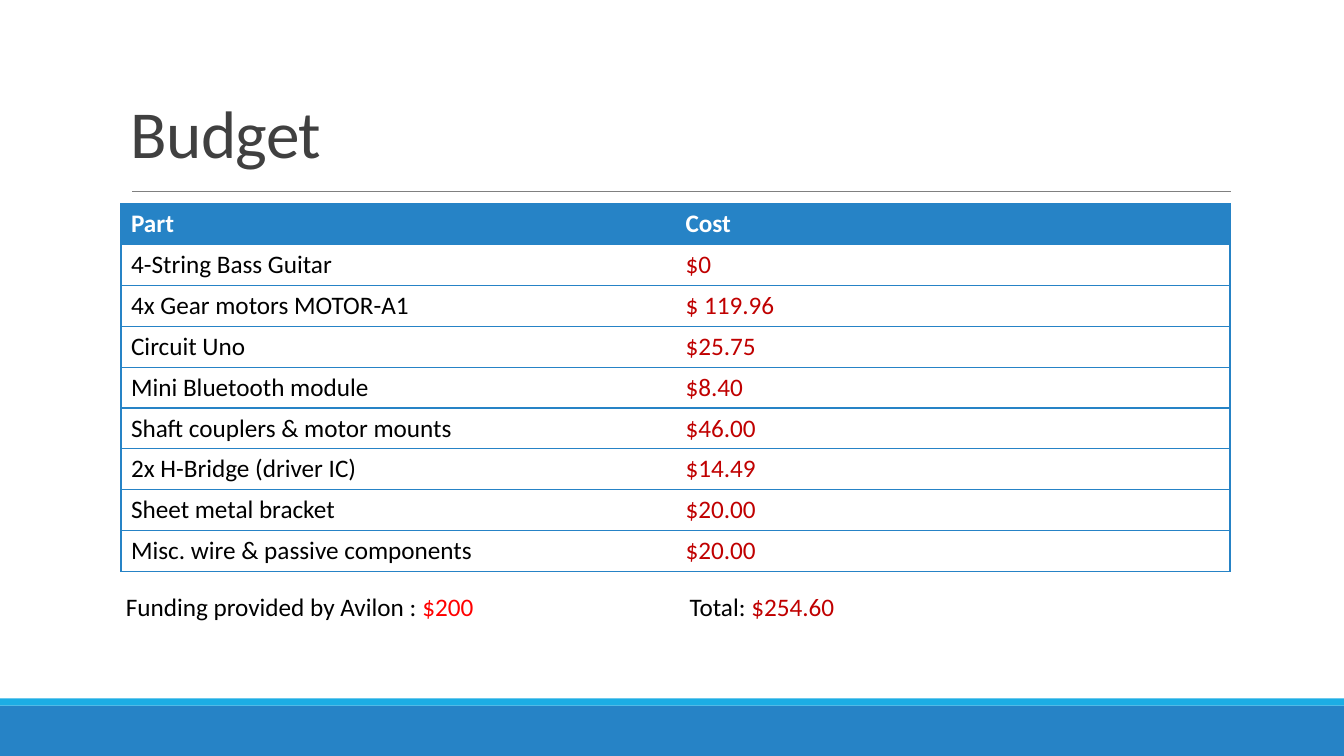
from lxml import etree
from pptx import Presentation
from pptx.dml.color import RGBColor
from pptx.enum.shapes import MSO_CONNECTOR, MSO_SHAPE
from pptx.enum.text import MSO_ANCHOR
from pptx.oxml.ns import qn
from pptx.util import Inches, Pt

RECTANGLE = MSO_SHAPE.RECTANGLE
STRAIGHT = MSO_CONNECTOR.STRAIGHT
TOP, BOTTOM = MSO_ANCHOR.TOP, MSO_ANCHOR.BOTTOM

BLUE = RGBColor(0x26, 0x83, 0xC6)
CYAN = RGBColor(0x1C, 0xAD, 0xE4)
GRAY = RGBColor(0x80, 0x80, 0x80)
DARK_GRAY = RGBColor(0x40, 0x40, 0x40)
WHITE = RGBColor(0xFF, 0xFF, 0xFF)
BLACK = RGBColor(0x00, 0x00, 0x00)
DARK_RED = RGBColor(0xC0, 0x00, 0x00)
RED = RGBColor(0xFF, 0x00, 0x00)

FONT = "Calibri"
SLIDE_WIDTH, SLIDE_HEIGHT = 13.33, 7.5
ROW_HEIGHT = 3.65 / 9

BUDGET = [
    ("Part", "Cost"),
    ("4-String Bass Guitar", "$0"),
    ("4x Gear motors MOTOR-A1", "$ 119.96"),
    ("Circuit Uno", "$25.75"),
    ("Mini Bluetooth module", "$8.40"),
    ("Shaft couplers & motor mounts", "$46.00"),
    ("2x H-Bridge (driver IC)", "$14.49"),
    ("Sheet metal bracket", "$20.00"),
    ("Misc. wire & passive components", "$20.00"),
]


def add_run(paragraph, text, color, size=18, bold=False):
    run = paragraph.add_run()
    run.text = text
    run.font.name = FONT
    run.font.size = Pt(size)
    run.font.bold = bold
    run.font.color.rgb = color
    return run


def add_band(slide, top, height, color):
    band = slide.shapes.add_shape(
        RECTANGLE, 0, Inches(top), Inches(SLIDE_WIDTH), Inches(height))
    band.shadow.inherit = False
    band.fill.solid()
    band.fill.fore_color.rgb = color
    band.line.fill.background()


def add_rule(slide, left, right, top):
    rule = slide.shapes.add_connector(
        STRAIGHT, Inches(left), Inches(top), Inches(right), Inches(top))
    rule.line.color.rgb = GRAY
    rule.line.width = Pt(0.5)
    etree.SubElement(rule._element.spPr, qn("a:effectLst"))


def add_text(slide, left, top, width, height, anchor=TOP):
    """Add a text box and return its first paragraph."""
    box = slide.shapes.add_textbox(
        Inches(left), Inches(top), Inches(width), Inches(height))
    box.text_frame.word_wrap = True
    box.text_frame.vertical_anchor = anchor
    return box.text_frame.paragraphs[0]


def set_borders(cell, visible_sides):
    """Draw the named sides (L, R, T, B) in blue and clear the others."""
    properties = cell._tc.get_or_add_tcPr()
    for index, side in enumerate("LRTB"):
        border = etree.Element(qn(f"a:ln{side}"), w=str(Pt(1)))
        if side in visible_sides:
            fill = etree.SubElement(border, qn("a:solidFill"))
            etree.SubElement(fill, qn("a:srgbClr"), val=str(BLUE))
        else:
            etree.SubElement(border, qn("a:noFill"))
        properties.insert(index, border)


def add_budget_table(slide, left, top, width):
    frame = slide.shapes.add_table(
        len(BUDGET), 2, Inches(left), Inches(top),
        Inches(width), Inches(ROW_HEIGHT * len(BUDGET)))
    table = frame.table
    table.horz_banding = False
    for row_index, entries in enumerate(BUDGET):
        table.rows[row_index].height = Inches(ROW_HEIGHT)
        is_header = row_index == 0
        for column_index, text in enumerate(entries):
            cell = table.cell(row_index, column_index)
            cell.fill.solid()
            cell.fill.fore_color.rgb = BLUE if is_header else WHITE
            color = WHITE if is_header else (BLACK, DARK_RED)[column_index]
            add_run(cell.text_frame.paragraphs[0], text, color, bold=is_header)
            set_borders(cell, "LR"[column_index] + "TB")


def add_summary(slide, left, width, label, amount, amount_color):
    paragraph = add_text(slide, left, 5.82, width, 0.4)
    add_run(paragraph, label, BLACK)
    add_run(paragraph, amount, amount_color)


def main():
    presentation = Presentation()
    presentation.slide_width = Inches(SLIDE_WIDTH)
    presentation.slide_height = Inches(SLIDE_HEIGHT)
    slide = presentation.slides.add_slide(presentation.slide_layouts[6])

    # Footer bands and title rule
    add_band(slide, 7, 0.5, BLUE)
    add_band(slide, 6.93, 0.07, CYAN)
    add_rule(slide, 1.31, 12.21, 1.9)

    # Title
    title = add_text(slide, 1.2, 0.31, 11, 1.45, BOTTOM)
    title.line_spacing = 0.85
    title_run = add_run(title, "Budget", DARK_GRAY, size=48)
    title_run.font._element.set("spc", "-50")

    # Costs and totals
    add_budget_table(slide, 1.2, 2.02, 11)
    add_summary(slide, 6.74, 3.41, "Total: ", "$254.60", DARK_RED)
    add_summary(slide, 1.15, 5.04, "Funding provided by Avilon : ", "$200", RED)

    presentation.save("out.pptx")


if __name__ == "__main__":
    main()
